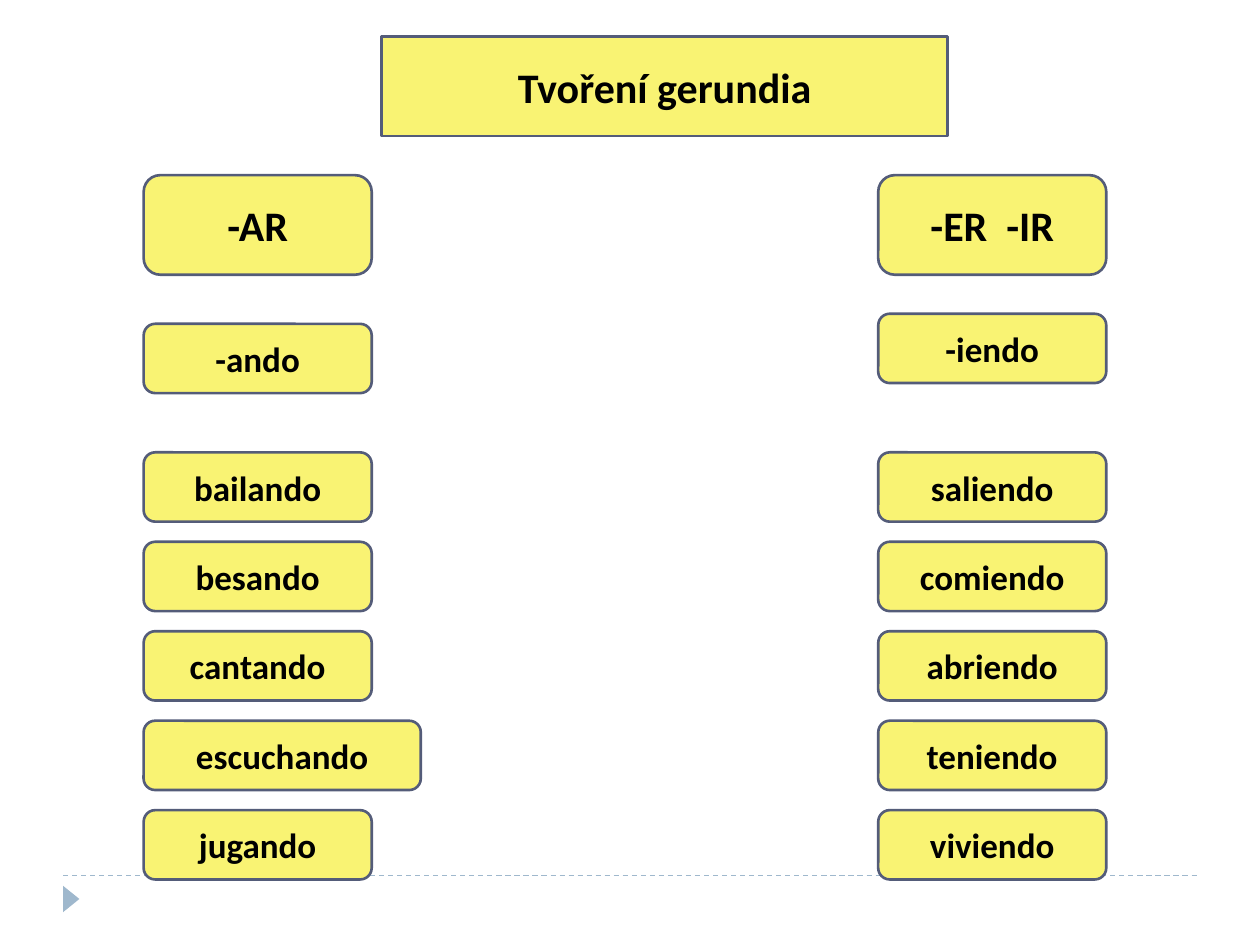
import pptx
import pptx.dml.color
import pptx.enum.dml
import pptx.enum.shapes
import pptx.enum.text
import pptx.oxml
import pptx.oxml.ns
import pptx.util
from pptx.util import Inches

CARD_FILL = "F9F373"
CARD_BORDER = "545C79"
FOOTER_BLUE = "9FB8CD"
TEXT_BLACK = "000000"

CARD_WIDTH = 1.81
HEADING_HEIGHT = 0.79
WORD_HEIGHT = 0.55
HEADING_TOP = 1.39
FIRST_EXAMPLE_TOP = 3.59
EXAMPLE_STEP = 0.71

# left edge, verb class, ending, top of ending, examples
VERB_COLUMNS = [
    (1.14, "-AR", "-ando", 2.57,
     ["bailando", "besando", "cantando", "escuchando", "jugando"]),
    (6.97, "-ER  -IR", "-iendo", 2.49,
     ["saliendo", "comiendo", "abriendo", "teniendo", "viviendo"]),
]
EXAMPLE_WIDTHS = {"escuchando": 2.2}


def color(hex_value):
    return pptx.dml.color.RGBColor.from_string(hex_value)


def style_card(card, text, size):
    card.shadow.inherit = False
    card.fill.solid()
    card.fill.fore_color.rgb = color(CARD_FILL)
    card.line.color.rgb = color(CARD_BORDER)
    card.line.width = pptx.util.Pt(1.5)

    frame = card.text_frame
    frame.text = text
    frame.word_wrap = True
    frame.auto_size = pptx.enum.text.MSO_AUTO_SIZE.NONE
    frame.vertical_anchor = pptx.enum.text.MSO_ANCHOR.MIDDLE
    paragraph = frame.paragraphs[0]
    paragraph.alignment = pptx.enum.text.PP_ALIGN.CENTER
    paragraph.font.name = "Calibri"
    paragraph.font.size = pptx.util.Pt(size)
    paragraph.font.bold = True
    paragraph.font.color.rgb = color(TEXT_BLACK)


def add_card(slide, text, left, top, width, height, size):
    card = slide.shapes.add_shape(
        pptx.enum.shapes.MSO_SHAPE.ROUNDED_RECTANGLE,
        Inches(left), Inches(top), Inches(width), Inches(height))
    style_card(card, text, size)


def place_title(slide, text):
    """Turn the title placeholder into a rounded card."""
    title = slide.shapes.title
    title.left, title.top = Inches(3.03), Inches(0.29)
    title.width, title.height = Inches(4.49), Inches(HEADING_HEIGHT)
    title.element.spPr.append(pptx.oxml.parse_xml(
        f'<a:prstGeom {pptx.oxml.ns.nsdecls("a")} prst="roundRect">'
        '<a:avLst/></a:prstGeom>'))
    style_card(title, text, 24)


def add_footer_rule(slide):
    rule = slide.shapes.add_connector(
        pptx.enum.shapes.MSO_CONNECTOR.STRAIGHT,
        Inches(0.5), Inches(6.95), Inches(9.5), Inches(6.95))
    rule.line.color.rgb = color(FOOTER_BLUE)
    rule.line.width = pptx.util.Pt(0.75)
    rule.line.dash_style = pptx.enum.dml.MSO_LINE.DASH
    rule.element.spPr.append(pptx.oxml.parse_xml(
        f'<a:effectLst {pptx.oxml.ns.nsdecls("a")}/>'))


def add_footer_marker(slide):
    marker = slide.shapes.add_shape(
        pptx.enum.shapes.MSO_SHAPE.ISOSCELES_TRIANGLE,
        Inches(0.46), Inches(7.07), Inches(0.21), Inches(0.13))
    marker.rotation = 90
    marker.shadow.inherit = False
    marker.fill.solid()
    marker.fill.fore_color.rgb = color(FOOTER_BLUE)
    marker.line.fill.background()


def add_verb_column(slide, left, verb_class, ending, ending_top, examples):
    add_card(slide, verb_class, left, HEADING_TOP, CARD_WIDTH, HEADING_HEIGHT, 24)
    add_card(slide, ending, left, ending_top, CARD_WIDTH, WORD_HEIGHT, 20)
    for row, example in enumerate(examples):
        add_card(slide, example, left, FIRST_EXAMPLE_TOP + row * EXAMPLE_STEP,
                 EXAMPLE_WIDTHS.get(example, CARD_WIDTH), WORD_HEIGHT, 20)


def main():
    presentation = pptx.Presentation()
    presentation.slide_width = Inches(10)
    presentation.slide_height = Inches(7.5)
    title_only = presentation.slide_layouts[5]
    slide = presentation.slides.add_slide(title_only)

    add_footer_rule(slide)
    add_footer_marker(slide)
    place_title(slide, "Tvoření gerundia")
    for column in VERB_COLUMNS:
        add_verb_column(slide, *column)

    presentation.save("out.pptx")


if __name__ == "__main__":
    main()
